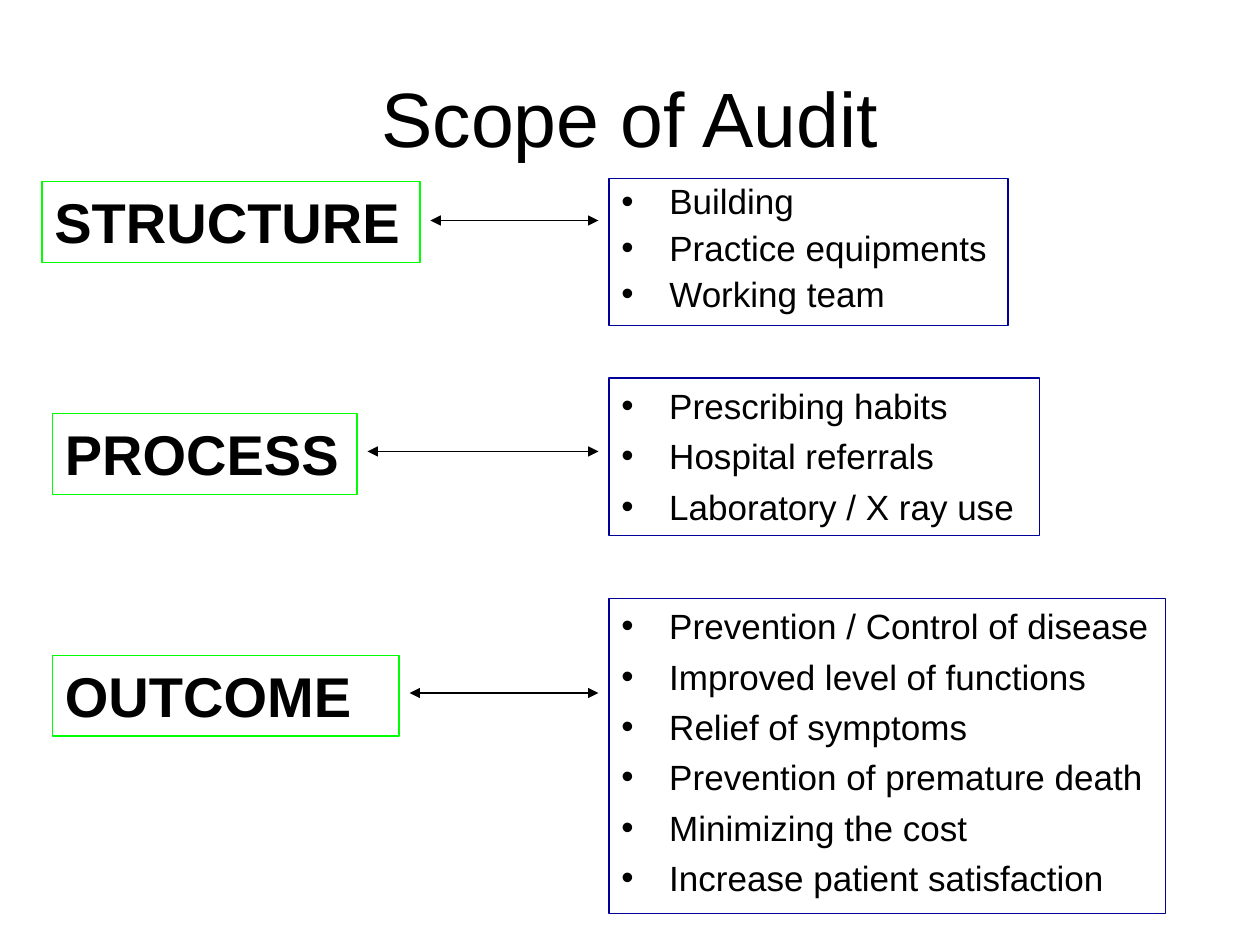
from dataclasses import dataclass

from lxml import etree
from pptx import Presentation
from pptx import util as u
from pptx.dml.color import RGBColor
from pptx.enum import shapes, text
from pptx.oxml.ns import qn


@dataclass(frozen=True)
class Theme:
    font: str = "Arial"
    ink: str = "000000"
    label_line: str = "00FF00"
    list_line: str = "000099"
    title_size: int = 44
    label_size: int = 32
    list_size: int = 20
    box_line: float = 0.75
    arrow_line: float = 1


THEME = Theme()
CELL = u.Inches(1) // 12  # the slide is a grid of 120 columns by 90 rows
LABEL_HEIGHT = 7.7
LIST_LEFT = 58
ARROW_GAP = 1

# label, label box (left, top, width), arrow row,
# list box (top, width, height), line spacing, items
ROWS = [
    ("STRUCTURE", (4, 17.3, 36), 21, (17, 38, 14), 0.9,
     ["Building", "Practice equipments", "Working team"]),
    ("PROCESS", (5, 39.4, 29), 43, (36, 41, 15), 1.0,
     ["Prescribing habits", "Hospital referrals", "Laboratory / X ray use"]),
    ("OUTCOME", (5, 62.4, 33), 66, (57, 53, 30), 1.0,
     ["Prevention / Control of disease", "Improved level of functions",
      "Relief of symptoms", "Prevention of premature death",
      "Minimizing the cost", "Increase patient satisfaction"]),
]


def grid(*cells):
    return [round(cell * CELL) for cell in cells]


def apply(target, **values):
    for name, value in values.items():
        setattr(target, name, value)


def style_text(paragraph, size, bold=False):
    apply(paragraph.font, name=THEME.font, size=u.Pt(size), bold=bold)
    paragraph.font.color.rgb = RGBColor.from_string(THEME.ink)


def add_bullet(paragraph):
    properties = paragraph._p.get_or_add_pPr()
    properties.set("marL", str(u.Inches(0.38)))
    properties.set("indent", str(-u.Inches(0.38)))
    etree.SubElement(properties, qn("a:buFont")).set("typeface", THEME.font)
    etree.SubElement(properties, qn("a:buChar")).set("char", "•")


def add_frame(slide, box, color):
    """Add an outlined, unfilled rectangle and return its text frame."""
    shape = slide.shapes.add_shape(shapes.MSO_SHAPE.RECTANGLE, *grid(*box))
    shape.shadow.inherit = False
    shape.fill.background()
    shape.line.color.rgb = RGBColor.from_string(color)
    shape.line.width = u.Pt(THEME.box_line)
    apply(shape.text_frame, word_wrap=True, vertical_anchor=text.MSO_ANCHOR.TOP)
    return shape.text_frame


def add_title(slide, box, words):
    frame = slide.shapes.add_textbox(*grid(*box)).text_frame
    apply(frame, word_wrap=True, vertical_anchor=text.MSO_ANCHOR.MIDDLE)
    paragraph = frame.paragraphs[0]
    apply(paragraph, text=words, alignment=text.PP_ALIGN.CENTER)
    style_text(paragraph, THEME.title_size)


def add_label(slide, box, words):
    paragraph = add_frame(slide, box, THEME.label_line).paragraphs[0]
    apply(paragraph, text=words, alignment=text.PP_ALIGN.LEFT)
    style_text(paragraph, THEME.label_size, bold=True)


def add_list(slide, box, items, spacing):
    frame = add_frame(slide, box, THEME.list_line)
    for index, item in enumerate(items):
        paragraph = frame.add_paragraph() if index else frame.paragraphs[0]
        apply(paragraph, text=item, alignment=text.PP_ALIGN.LEFT,
              line_spacing=spacing, space_before=u.Pt(4.8 if index else 0))
        add_bullet(paragraph)
        style_text(paragraph, THEME.list_size)


def add_double_arrow(slide, left, right, row):
    connector = slide.shapes.add_connector(
        shapes.MSO_CONNECTOR.STRAIGHT, *grid(left, row, right, row))
    connector.line.color.rgb = RGBColor.from_string(THEME.ink)
    connector.line.width = u.Pt(THEME.arrow_line)
    line = connector.line._get_or_add_ln()
    for end in ("a:headEnd", "a:tailEnd"):
        etree.SubElement(line, qn(end)).set("type", "triangle")
    etree.SubElement(connector._element.spPr, qn("a:effectLst"))


def add_scope_row(slide, label, label_box, arrow_row, list_box, spacing, items):
    left, top, width = label_box
    list_top, list_width, list_height = list_box
    add_label(slide, (left, top, width, LABEL_HEIGHT), label)
    add_list(slide, (LIST_LEFT, list_top, list_width, list_height), items, spacing)
    add_double_arrow(slide, left + width + ARROW_GAP, LIST_LEFT - ARROW_GAP, arrow_row)


def main():
    presentation = Presentation()
    apply(presentation, slide_width=120 * CELL, slide_height=90 * CELL)
    slide = presentation.slides.add_slide(presentation.slide_layouts[6])
    add_title(slide, (6, 3.6, 108, 15), "Scope of Audit")
    for row in ROWS:
        add_scope_row(slide, *row)
    presentation.save("out.pptx")


if __name__ == "__main__":
    main()
